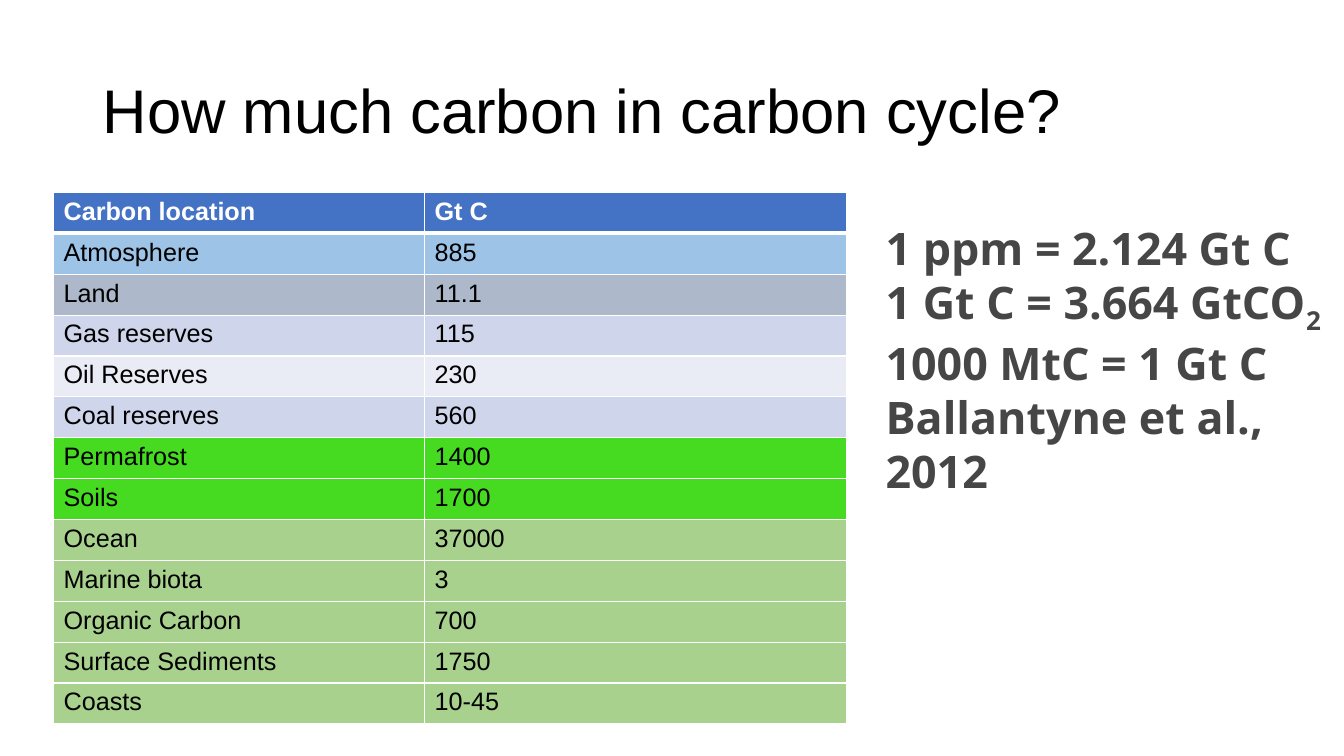
from dataclasses import dataclass

from lxml.etree import SubElement
from pptx import Presentation
from pptx.dml.color import RGBColor
from pptx.enum.text import MSO_ANCHOR, MSO_AUTO_SIZE, PP_ALIGN
from pptx.oxml.ns import qn
from pptx.util import Cm, Pt


@dataclass(frozen=True)
class Theme:
    font: str = "Arial"
    accent: str = "Open Sans"
    title: int = 44
    cell: int = 18
    note: int = 32
    black: str = "000000"
    white: str = "FFFFFF"
    gray: str = "464646"
    head: str = "4472C4"
    air: str = "9DC3E6"
    land: str = "ADB9CA"
    dark: str = "CFD5EA"
    light: str = "E9EBF5"
    soil: str = "46DB21"
    sea: str = "A9D18E"


THEME = Theme()

STOCKS = [
    ("Carbon location", "Gt C", THEME.head),
    ("Atmosphere", "885", THEME.air),
    ("Land", "11.1", THEME.land),
    ("Gas reserves", "115", THEME.dark),
    ("Oil Reserves", "230", THEME.light),
    ("Coal reserves", "560", THEME.dark),
    ("Permafrost", "1400", THEME.soil),
    ("Soils", "1700", THEME.soil),
    ("Ocean", "37000", THEME.sea),
    ("Marine biota", "3", THEME.sea),
    ("Organic Carbon", "700", THEME.sea),
    ("Surface Sediments", "1750", THEME.sea),
    ("Coasts", "10-45", THEME.sea),
]

# Each fact is its text and its subscript; the first is set with thin spaces.
FACTS = [
    ("1 ppm = 2.124 Gt C", ""),
    ("1 Gt C = 3.664 GtCO", "2"),
    ("1000 MtC = 1 Gt C", ""),
    ("Ballantyne et al., 2012", ""),
]


def style(run, name, size, color, bold=False):
    font = run.font
    font.name, font.size, font.bold = name, Pt(size), bold
    font.color.rgb = RGBColor.from_string(color)


def edge(cell, side, width):
    """Draw a white border on one side: L, R, T or B."""
    props = cell._tc.get_or_add_tcPr()
    line = SubElement(props, qn(f"a:ln{side}"), w=str(Pt(width)))
    fill = SubElement(line, qn("a:solidFill"))
    SubElement(fill, qn("a:srgbClr"), val=THEME.white)


def add_title(slide, text):
    title = slide.shapes.title
    title.left, title.top = Cm(2.33), Cm(1.02)
    title.width, title.height = Cm(29.21), Cm(3.68)
    frame = title.text_frame
    frame.text = text
    frame.auto_size = MSO_AUTO_SIZE.NONE
    frame.vertical_anchor = MSO_ANCHOR.MIDDLE
    para = frame.paragraphs[0]
    para.alignment, para.line_spacing = PP_ALIGN.LEFT, 0.9
    style(para.runs[0], THEME.font, THEME.title, THEME.black)


def fill_cell(cell, text, color, head, under):
    """Set text, borders and fill; under marks the row below the header."""
    cell.text = text
    ink = THEME.white if head else THEME.black
    style(cell.text_frame.paragraphs[0].runs[0], THEME.font, THEME.cell, ink, head)
    for side, width in (("L", 1), ("R", 1), ("T", 3 if under else 1), ("B", 3 if head else 1)):
        edge(cell, side, width)
    cell.fill.solid()
    cell.fill.fore_color.rgb = RGBColor.from_string(color)


def add_stocks(slide, stocks):
    widths, height = (Cm(9.35), Cm(10.64)), Cm(1.03)
    frame = slide.shapes.add_table(
        len(stocks), len(widths), Cm(1.35), Cm(4.85), sum(widths), height * len(stocks)
    )
    table = frame.table
    for col, width in zip(table.columns, widths):
        col.width = width
    for i, (*texts, color) in enumerate(stocks):
        table.rows[i].height = height
        for j, text in enumerate(texts):
            fill_cell(table.cell(i, j), text, color, i == 0, i == 1)


def add_facts(slide, facts):
    box = slide.shapes.add_textbox(Cm(22.07), Cm(5.44), Cm(11.81), Cm(7.09))
    frame = box.text_frame
    frame.word_wrap = True
    frame.auto_size = MSO_AUTO_SIZE.SHAPE_TO_FIT_TEXT
    frame.text = "\n".join(text for text, _ in facts)
    for para, (_, sub) in zip(frame.paragraphs, facts):
        if sub:
            run = para.add_run()
            run.text = sub
            run._r.get_or_add_rPr().set("baseline", "-25000")
        for run in para.runs:
            style(run, THEME.accent, THEME.note, THEME.gray, True)


def main():
    deck = Presentation()
    deck.slide_width, deck.slide_height = Cm(33.87), Cm(19.05)
    slide = deck.slides.add_slide(deck.slide_layouts.get_by_name("Title Only"))
    add_title(slide, "How much carbon in carbon cycle?")
    add_stocks(slide, STOCKS)
    add_facts(slide, FACTS)
    deck.save("out.pptx")


if __name__ == "__main__":
    main()
